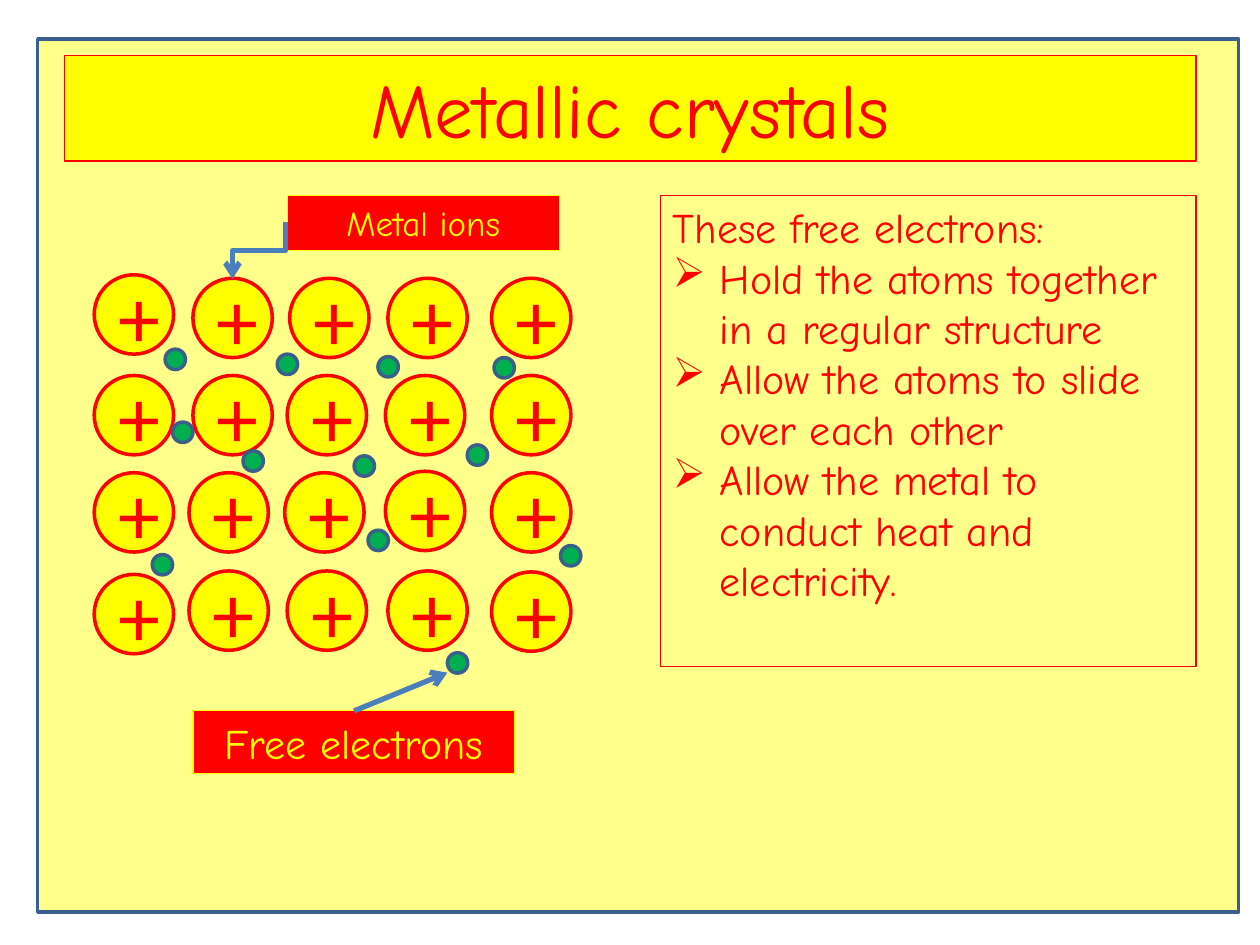
import pptx
import pptx.util
import pptx.dml.color
import pptx.enum.shapes
import pptx.enum.text
import pptx.oxml
import pptx.oxml.ns
import lxml.etree

Cm, Pt = pptx.util.Cm, pptx.util.Pt
kinds = pptx.enum.shapes.MSO_SHAPE
links = pptx.enum.shapes.MSO_CONNECTOR
align = pptx.enum.text.PP_ALIGN
anchor = pptx.enum.text.MSO_ANCHOR
qn = pptx.oxml.ns.qn

RED, YELLOW, NAVY = "FF0000", "FFFF00", "3A5F8C"


def color(code):
    return pptx.dml.color.RGBColor.from_string(code)


def draw(kind, box, fill, line, width, text=(), size=24, ink=RED, font="Comic Neue"):
    """Add a shape at box (cm), with one centred paragraph per text."""
    shape = slide.shapes.add_shape(kind, *[Cm(n) for n in box])
    shape.shadow.inherit = False
    if fill:
        shape.fill.solid()
        shape.fill.fore_color.rgb = color(fill)
    else:
        shape.fill.background()
    shape.line.color.rgb = color(line)
    shape.line.width = Pt(width)
    frame = shape.text_frame
    frame.word_wrap = True
    for n, words in enumerate(text):
        para = frame.add_paragraph() if n else frame.paragraphs[0]
        para.text = words
        para.alignment = align.CENTER
        para.font.size = Pt(size)
        para.font.name = font
        para.font.color.rgb = color(ink)
    return shape


deck = pptx.Presentation()
deck.slide_width, deck.slide_height = Cm(25.4), Cm(19.05)
slide = deck.slides.add_slide(deck.slide_layouts[6])

# Panel and title
draw(kinds.RECTANGLE, (0.76, 0.79, 24.21, 17.6), "FFFF8B", NAVY, 2)
title = draw(kinds.RECTANGLE, (1.3, 1.12, 22.81, 2.13), YELLOW, RED, 0.75,
             ["Metallic crystals"], 44)
title.text_frame.vertical_anchor = anchor.TOP

# Metal ions, row by row, slightly uneven
ions = [
    [(1.9, 5.54), (3.89, 5.61), (5.84, 5.61), (7.82, 5.61), (9.91, 5.61)],
    [(1.9, 7.57), (3.89, 7.57), (5.79, 7.57), (7.77, 7.57), (9.91, 7.57)],
    [(1.9, 9.53), (3.81, 9.53), (5.74, 9.53), (7.77, 9.5), (9.91, 9.53)],
    [(1.9, 11.58), (3.81, 11.51), (5.79, 11.51), (7.82, 11.51), (9.91, 11.53)],
]
for row in ions:
    for x, y in row:
        draw(kinds.OVAL, (x, y, 1.6, 1.6), YELLOW, RED, 2, ["+"], 48, RED, "Calibri")

# Free electrons
dots = [(5.59, 7.14), (3.33, 7.04), (7.62, 7.19), (9.96, 7.21),
        (3.48, 8.51), (4.9, 9.09), (7.14, 9.19), (9.42, 8.97),
        (7.42, 10.69), (3.07, 11.18), (9.02, 13.16), (11.3, 11)]
for x, y in dots:
    draw(kinds.OVAL, (x, y, 0.41, 0.41), "00B050", NAVY, 2)

# Labels
labels = [("Metal ions", 20, (5.79, 3.94, 5.49, 1.11)),
          ("Free electrons", 24, (3.89, 14.33, 6.48, 1.27))]
for words, size, box in labels:
    label = draw(kinds.RECTANGLE, box, RED, YELLOW, 0.75, [words], size, YELLOW)
    label.text_frame.vertical_anchor = anchor.TOP

# Arrows from the labels; the elbow is turned a quarter
arrows = [(links.ELBOW, (4.65, 4.52, 5.79, 5.59), 90),
          (links.STRAIGHT, (7.14, 14.33, 9.02, 13.56), 0)]
for kind, ends, turn in arrows:
    arrow = slide.shapes.add_connector(kind, *[Cm(n) for n in ends])
    arrow.line.color.rgb = color("4B7EBC")
    arrow.line.width = Pt(3)
    props = arrow._element.spPr
    if turn:
        props.find(qn("a:xfrm")).set("rot", str(turn * 60000))
    tail = lxml.etree.SubElement(props.find(qn("a:ln")), qn("a:tailEnd"))
    tail.set("type", "arrow")
    lxml.etree.SubElement(props, qn("a:effectLst"))

# What the electrons do
notes = draw(kinds.RECTANGLE, (13.31, 3.94, 10.8, 9.5), None, RED, 0.75, [
    "These free electrons:",
    "Hold the atoms together in a regular structure",
    "Allow the atoms to slide over each other",
    "Allow the metal to conduct heat and electricity.",
])
notes.text_frame.vertical_anchor = anchor.TOP
for n, para in enumerate(notes.text_frame.paragraphs):
    para.alignment = align.LEFT
    if n:
        props = para._p.get_or_add_pPr()
        props.set("marL", str(Cm(0.95)))
        props.set("indent", str(-Cm(0.95)))
        mark = pptx.oxml.parse_xml(
            '<a:buChar xmlns:a="http://schemas.openxmlformats.org/drawingml/2006/main"'
            ' char="➢"/>')
        props.insert(0, mark)

deck.save("out.pptx")
